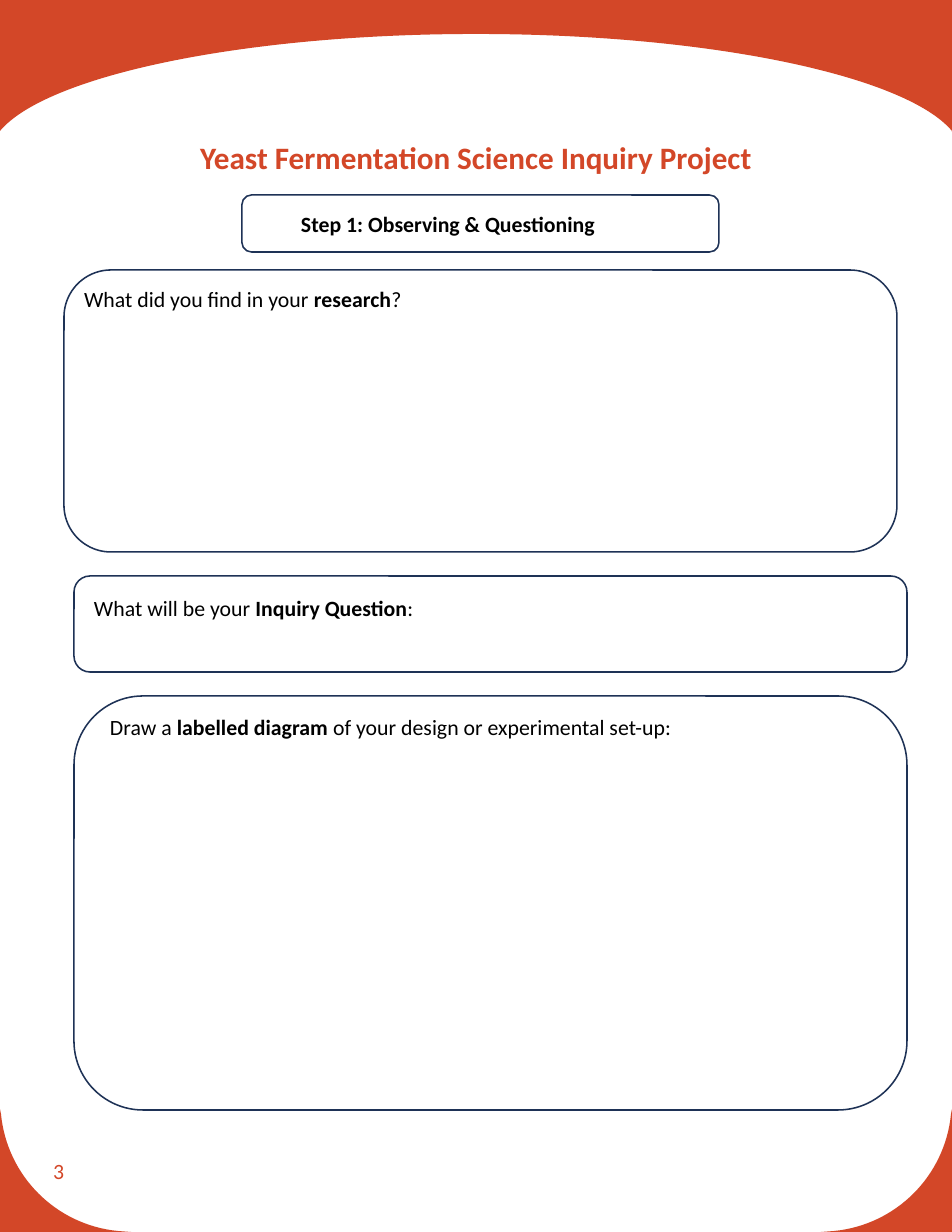
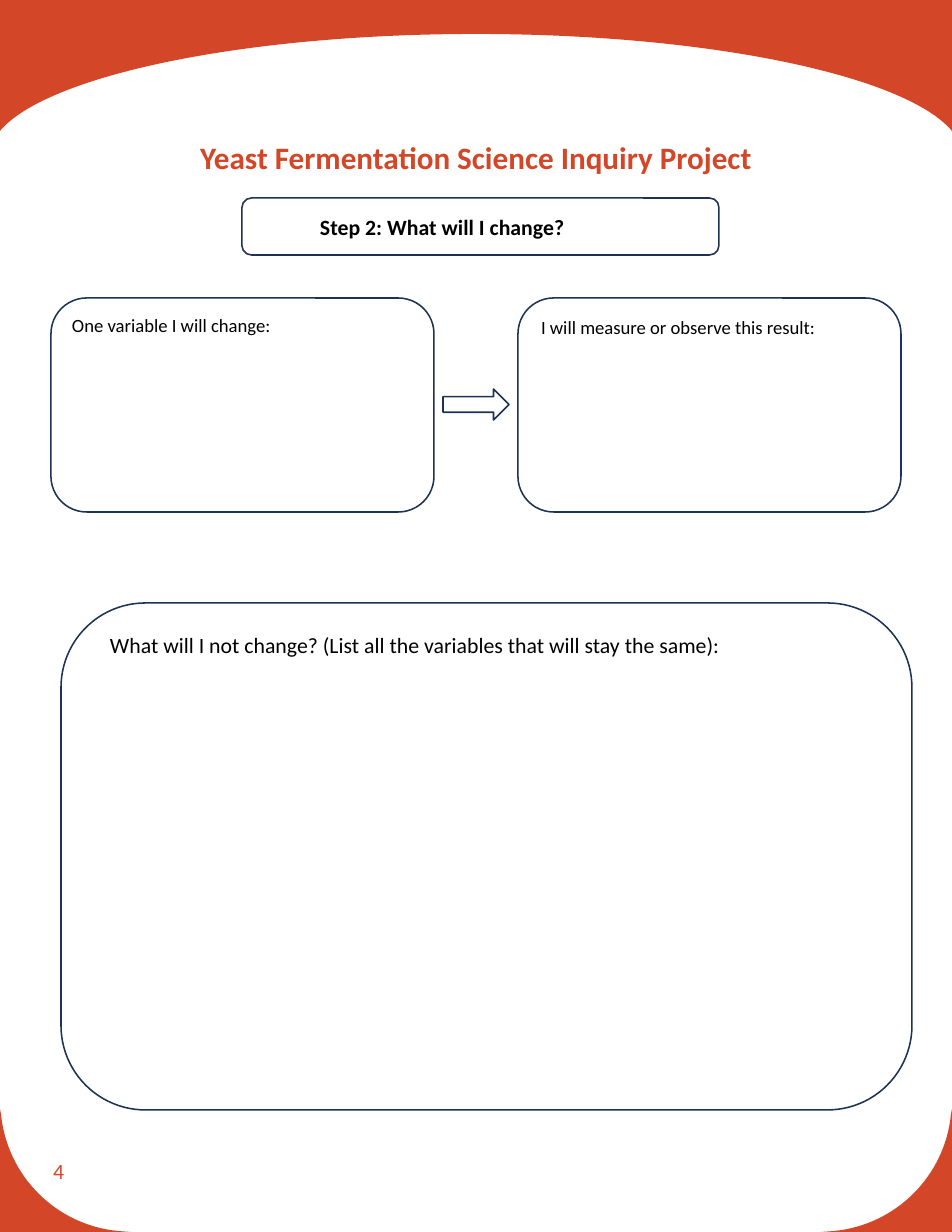
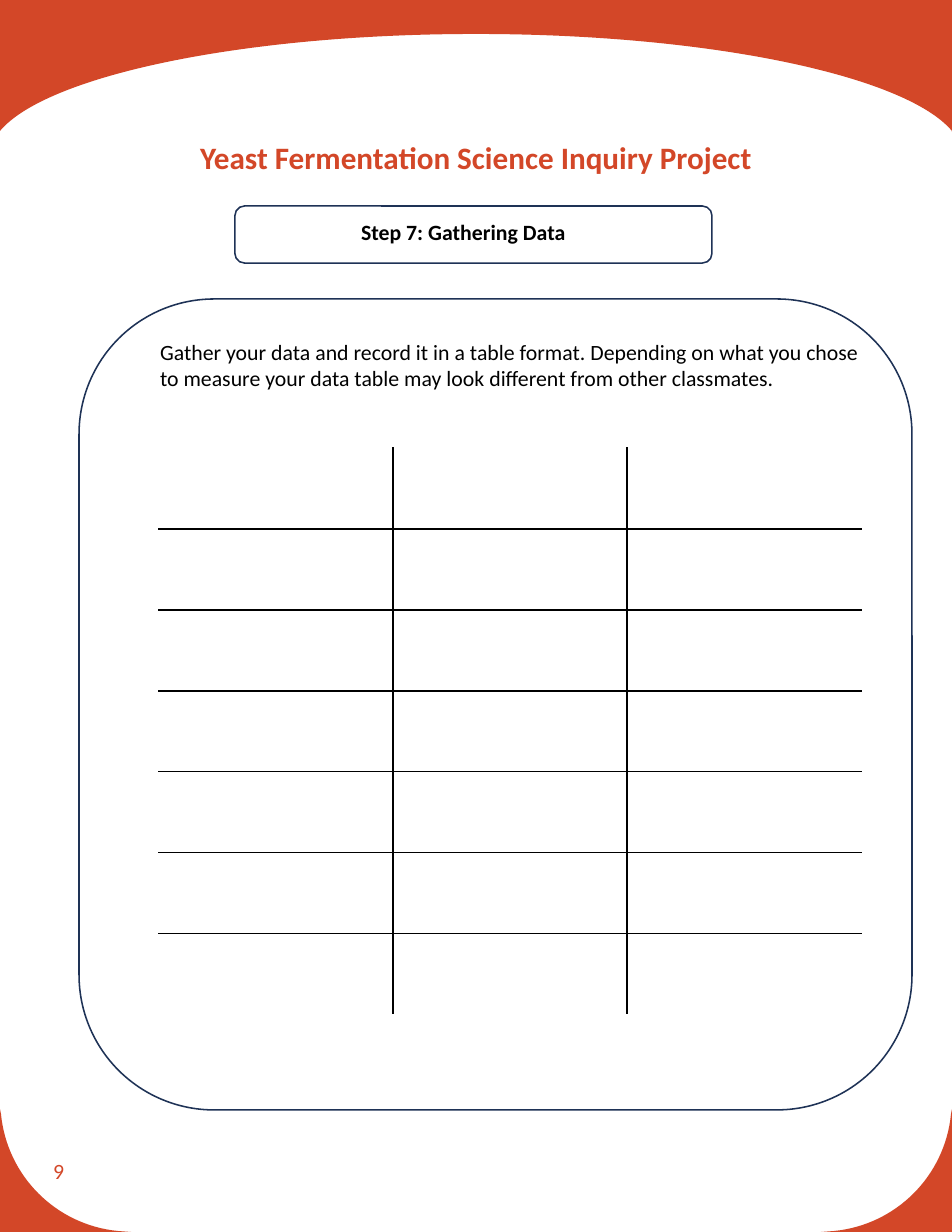
from lxml import etree
from pptx import Presentation
from pptx import util as u
from pptx.dml.color import RGBColor
from pptx.enum import shapes, text
from pptx.oxml import ns

WIDTH, HEIGHT = 952, 1232
SCALE = 914400 / 112
FONT = "Calibri"
COLORS = {"band": "D34728", "outline": "1E3256", "text": "000000", "paper": "FFFFFF"}
TITLE = "Yeast Fermentation Science Inquiry Project"
TITLE_FORMAT = {"size": u.Pt(20), "bold": True}
BODY_FORMAT = {"size": u.Pt(14), "bold": False}
SMALL_FORMAT = {"size": u.Pt(12), "bold": False}
STEP_SIZE = (477, 57)


def px(value):
    return u.Emu(round(value * SCALE))


def color(name):
    return RGBColor.from_string(COLORS[name])


def place(shape, left, top, width, height):
    for name, value in zip(("left", "top", "width", "height"), (left, top, width, height)):
        setattr(shape, name, px(value))


def mirror(points):
    return [(WIDTH - x, y) for x, y in points]


def bend(shape, curve_starts):
    segments = list(shape.element.iter(ns.qn("a:lnTo")))
    for start in curve_starts:
        first, *others = segments[start:start + 3]
        first.tag = ns.qn("a:cubicBezTo")
        curve = etree.Element(ns.qn("a:cubicBezTo"))
        first.addprevious(curve)
        for segment in (first, *others):
            curve.append(segment[0])
            segment.getparent().remove(segment)


def move_band_to_layout(slide, points, curve_starts):
    builder = slide.shapes.build_freeform(*points[0], scale=SCALE)
    builder.add_line_segments(points[1:], close=True)
    band = builder.convert_to_shape()
    bend(band, curve_starts)
    band.shadow.inherit = False
    band.fill.solid()
    band.fill.fore_color.rgb = color("band")
    band.line.fill.background()
    slide.slide_layout.shapes.element.append(band.element)


def add_bands(slide):
    half_arch = [(952, 131), (906, 76), (710, 34), (476, 34)]
    arch = half_arch + mirror(half_arch)[-2::-1]
    header = [(0, 0), (WIDTH, 0), (WIDTH, 132), *arch, (0, 132)]
    corner = [(0, 1109), (1, 1114), (7, 1176), (56, 1225), (118, 1231),
              (131, HEIGHT), (0, HEIGHT)]
    move_band_to_layout(slide, header, (3, 6))
    for points in (corner, mirror(corner)):
        move_band_to_layout(slide, points, (1,))


def write(paragraph, content, formats, color_name="text"):
    for index, part in enumerate(content.split("**")):
        if not part:
            continue
        run = paragraph.add_run()
        run.text = part
        run.font.name = FONT
        run.font.color.rgb = color(color_name)
        for name, value in formats.items():
            setattr(run.font, name, value)
        if index % 2:
            run.font.bold = True


def add_title(slide):
    title = slide.shapes.title
    place(title, 40, 122, 872, 96)
    frame = title.text_frame
    settings = {
        "auto_size": text.MSO_AUTO_SIZE.NONE,
        "vertical_anchor": text.MSO_ANCHOR.TOP,
        "margin_top": px(16),
    }
    for name, value in settings.items():
        setattr(frame, name, value)
    paragraph = frame.paragraphs[0]
    paragraph.alignment = text.PP_ALIGN.CENTER
    write(paragraph, TITLE, TITLE_FORMAT, "band")


def add_label(slide, content, left, top, width, height=38, formats=BODY_FORMAT,
              color_name="text", anchor=text.MSO_ANCHOR.TOP):
    label = slide.shapes.add_textbox(px(left), px(top), px(width), px(height))
    frame = label.text_frame
    frame.word_wrap = True
    frame.vertical_anchor = anchor
    write(frame.paragraphs[0], content, formats, color_name)


def add_outline(slide, left, top, width, height,
                kind=shapes.MSO_SHAPE.ROUNDED_RECTANGLE):
    shape = slide.shapes.add_shape(kind, px(left), px(top), px(width), px(height))
    shape.shadow.inherit = False
    shape.fill.background()
    shape.line.color.rgb = color("outline")
    shape.line.width = u.Pt(1)
    return shape


def add_step(slide, content, left, top, label_left, label_top):
    add_outline(slide, left, top, *STEP_SIZE)
    add_label(slide, f"**{content}**", label_left, label_top, 463)


def set_borders(cell, sides):
    properties = cell._tc.get_or_add_tcPr()
    for index, (side, name) in enumerate(sides.items()):
        line = etree.Element(ns.qn(f"a:ln{side}"), w=str(u.Pt(1)))
        fill = etree.SubElement(line, ns.qn("a:solidFill"))
        etree.SubElement(fill, ns.qn("a:srgbClr"), val=COLORS[name])
        properties.insert(index, line)


def add_data_grid(slide, left, top, rows, columns, row_height, column_width):
    frame = slide.shapes.add_table(rows, columns, px(left), px(top),
                                   px(columns * column_width), px(rows * row_height))
    table = frame.table
    table.first_row = table.horz_banding = False
    for column in table.columns:
        column.width = px(column_width)
    for row_index, row in enumerate(table.rows):
        row.height = px(row_height)
        for column_index, cell in enumerate(row.cells):
            cell.fill.background()
            outer = {
                "L": column_index == 0,
                "R": column_index == columns - 1,
                "T": row_index == 0,
                "B": row_index == rows - 1,
            }
            set_borders(cell, {side: "paper" if edge else "text" for side, edge in outer.items()})


def add_page(presentation, number):
    slide = presentation.slides.add_slide(presentation.slide_layouts[5])
    add_label(slide, str(number), 42, 1138, 214, 66, color_name="band",
              anchor=text.MSO_ANCHOR.MIDDLE)
    add_title(slide)
    return slide


def build_questioning(slide):
    inquiry = add_outline(slide, 74, 576, 833, 96)
    inquiry.fill.solid()
    inquiry.fill.fore_color.rgb = color("paper")
    add_label(slide, "What will be your **Inquiry Question**:", 83, 589, 813)
    add_outline(slide, 64, 270, 833, 282)
    add_label(slide, "What did you find in your **research**?", 73, 280, 400)
    add_step(slide, "Step 1: Observing & Questioning", 242, 195, 290, 205)
    add_outline(slide, 74, 696, 833, 414)
    add_label(slide, "Draw a **labelled diagram **of your design or experimental set-up:",
              99, 708, 696)


def build_variables(slide):
    add_step(slide, "Step 2: What will I change?", 242, 198, 309, 208)
    for left in (51, 518):
        add_outline(slide, left, 298, 383, 214)
    add_outline(slide, 443, 389, 66, 31, shapes.MSO_SHAPE.RIGHT_ARROW)
    add_label(slide, "One variable I will change:", 61, 308, 289, 34, SMALL_FORMAT)
    add_label(slide, "I will measure or observe this result:", 530, 310, 349, 34, SMALL_FORMAT)
    add_outline(slide, 61, 603, 851, 507)
    add_label(slide, "What will I not change? (List all the variables that will stay the same):",
              99, 626, 752)


def build_data(slide):
    add_step(slide, "Step 7: Gathering Data", 235, 206, 350, 213)
    add_outline(slide, 79, 299, 833, 811)
    add_label(slide, "Gather your data and record it in a table format. Depending on what you "
              "chose to measure your data table may look different from other classmates.",
              149, 333, 724, 91)
    add_data_grid(slide, 159, 448, 7, 3, 81, 234)


def main():
    presentation = Presentation()
    presentation.slide_width, presentation.slide_height = px(WIDTH), px(HEIGHT)
    pages = {3: build_questioning, 4: build_variables, 9: build_data}
    for number, build in pages.items():
        build(add_page(presentation, number))
    add_bands(presentation.slides[0])
    presentation.save("out.pptx")


if __name__ == "__main__":
    main()
